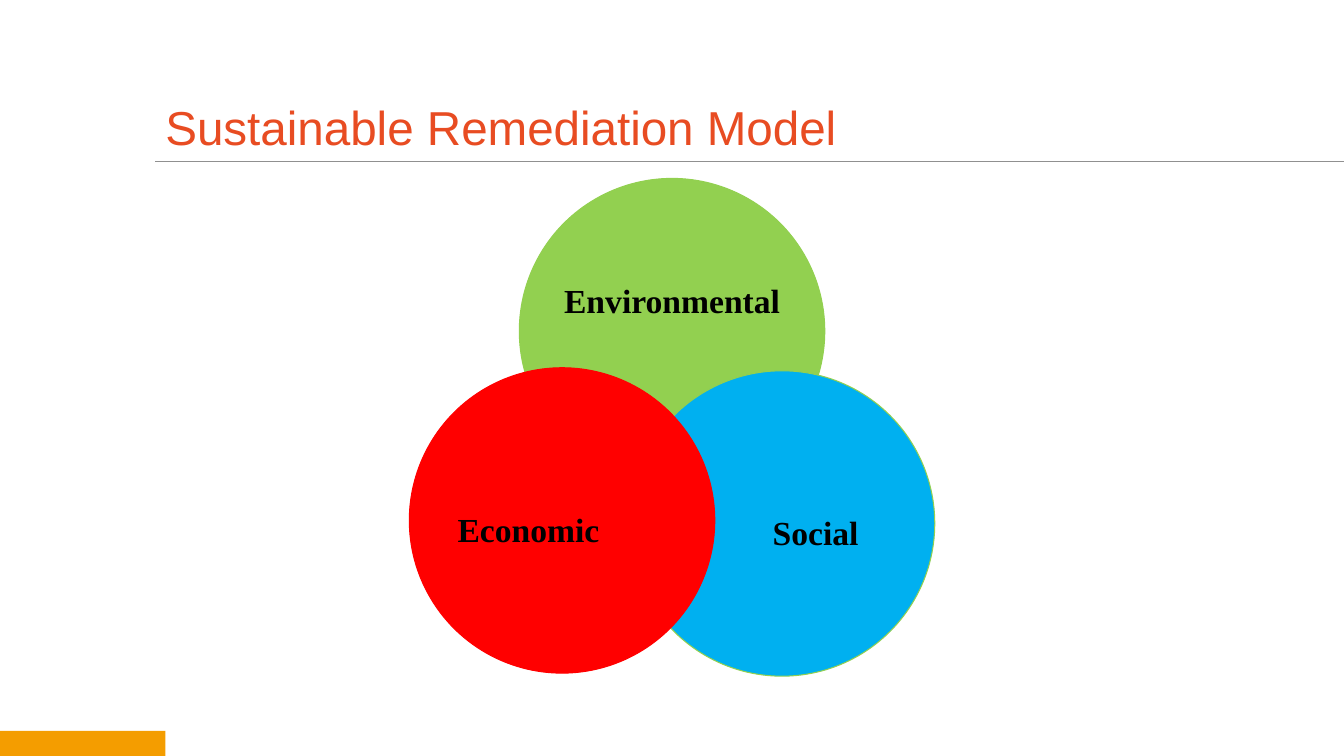
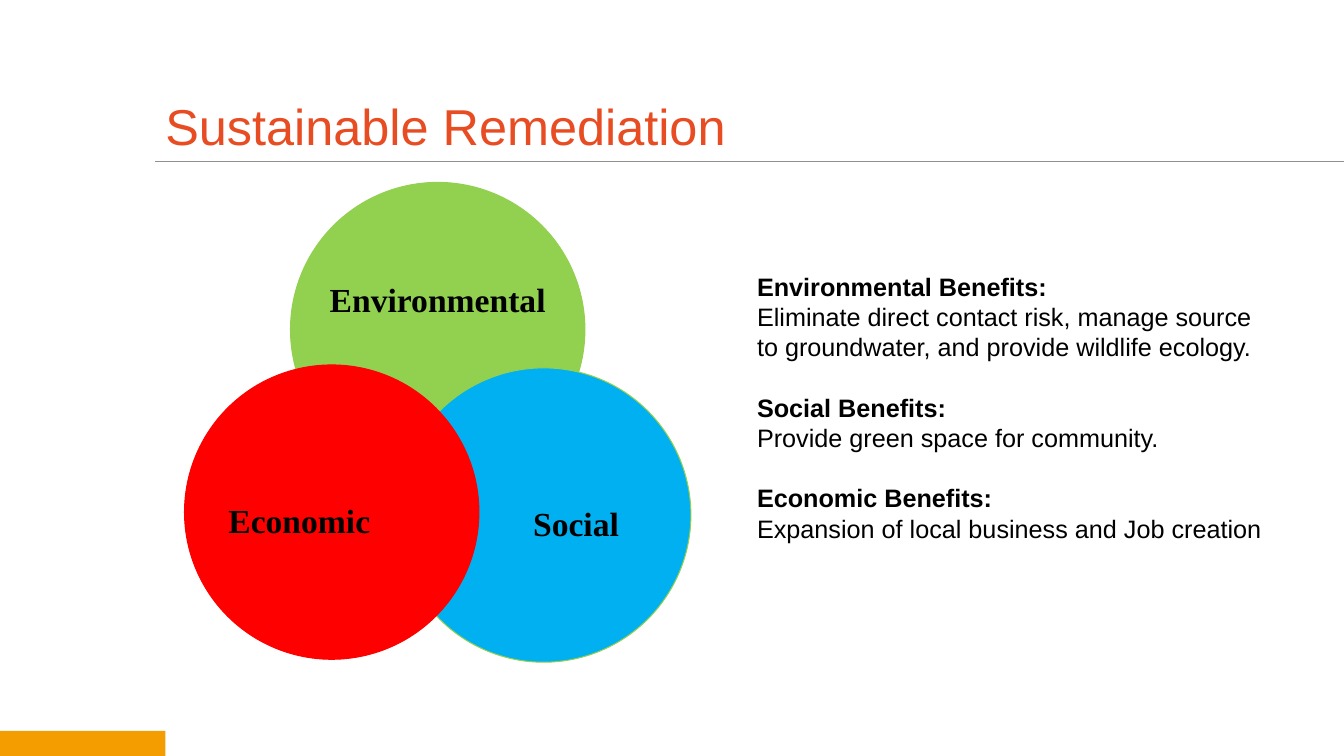
from pptx import Presentation
from pptx.dml.color import RGBColor
from pptx.enum.shapes import MSO_CONNECTOR, MSO_SHAPE
from pptx.enum.text import MSO_ANCHOR, MSO_AUTO_SIZE, PP_ALIGN
from pptx.oxml.ns import qn
from pptx.util import Inches, Pt
from lxml.etree import SubElement

ORANGE = RGBColor(0xF4, 0x9D, 0x00)
TITLE_RED = RGBColor(0xE8, 0x4C, 0x22)
RULE_GRAY = RGBColor(0x90, 0x90, 0x90)
GREEN = RGBColor(0x92, 0xD0, 0x50)
BLUE = RGBColor(0x00, 0xB0, 0xF0)
RED = RGBColor(0xFF, 0x00, 0x00)
BLACK = RGBColor(0x00, 0x00, 0x00)

SLIDE_WIDTH, SLIDE_HEIGHT = 13.33, 7.5
TITLE_LEFT = 1.54
BODY_LINE = Pt(21.6)

# Circle and label frames are fractions of the circle diameter.
CIRCLES = [
    ("Environmental", GREEN, GREEN, (0.36, 0), (0.13, 0.18, 0.74, 0.45)),
    ("Social", BLUE, GREEN, (0.72, 0.63), (0.31, 0.26, 0.6, 0.55)),
    ("Economic", RED, RED, (0, 0.62), (0.09, 0.26, 0.6, 0.55)),
]
BENEFITS = [
    ("Environmental Benefits:",
     "Eliminate direct contact risk, manage source to groundwater, "
     "and provide wildlife ecology."),
    ("Social Benefits:", "Provide green space for community."),
    ("Economic Benefits:", "Expansion of local business and Job creation"),
]


def add_span(para, text, font_name, size, color, bold=False):
    """Add one formatted run to a paragraph."""
    span = para.add_run()
    span.text = text
    span.font.name = font_name
    span.font.size = Pt(size)
    span.font.color.rgb = color
    span.font.bold = bold


def add_titled_page(deck, title, size):
    """Add a page with the shared title style, rule and corner band."""
    page = deck.slides.add_slide(deck.slide_layouts[5])
    band = page.shapes.add_shape(
        MSO_SHAPE.RECTANGLE, 0, Inches(SLIDE_HEIGHT - 0.25), Inches(1.64), Inches(0.25))
    band.shadow.inherit = False
    band.fill.solid()
    band.fill.fore_color.rgb = ORANGE
    band.line.fill.background()

    rule = page.shapes.add_connector(
        MSO_CONNECTOR.STRAIGHT, Inches(TITLE_LEFT), Inches(1.6),
        Inches(SLIDE_WIDTH), Inches(1.6))
    rule.line.color.rgb = RULE_GRAY
    rule.line.width = Pt(0.5)
    SubElement(rule._element.spPr, qn("a:effectLst"))

    box = page.shapes.title
    box.left, box.top = Inches(TITLE_LEFT), Inches(0.3)
    box.width, box.height = Inches(10.25), Inches(1.29)
    frame = box.text_frame
    frame.auto_size = MSO_AUTO_SIZE.NONE
    frame.vertical_anchor = MSO_ANCHOR.BOTTOM
    para = frame.paragraphs[0]
    para.alignment = PP_ALIGN.LEFT
    add_span(para, title, "Arial", size, TITLE_RED)
    return page


def add_circle(group, left, top, diameter, fill, outline):
    """Add a filled circle to the diagram."""
    circle = group.shapes.add_shape(
        MSO_SHAPE.OVAL, Inches(left), Inches(top), Inches(diameter), Inches(diameter))
    circle.shadow.inherit = False
    circle.fill.solid()
    circle.fill.fore_color.rgb = fill
    circle.line.color.rgb = outline
    circle.line.width = Pt(0.75)


def add_label(group, text, left, top, width, height):
    """Add a centred circle label without margins."""
    box = group.shapes.add_textbox(
        Inches(left), Inches(top), Inches(width), Inches(height))
    frame = box.text_frame
    frame.word_wrap = True
    frame.vertical_anchor = MSO_ANCHOR.MIDDLE
    frame.margin_left = frame.margin_right = 0
    frame.margin_top = frame.margin_bottom = 0
    para = frame.paragraphs[0]
    para.alignment = PP_ALIGN.CENTER
    para.line_spacing = 0.9
    add_span(para, text, "Times New Roman", 24, BLACK, bold=True)


def add_venn(page, left, top, diameter):
    """Add the three overlapping circles as one group."""
    group = page.shapes.add_group_shape()
    for text, fill, outline, offset, label in CIRCLES:
        circle_left = left + offset[0] * diameter
        circle_top = top + offset[1] * diameter
        add_circle(group, circle_left, circle_top, diameter, fill, outline)
        x, y, width, height = (part * diameter for part in label)
        add_label(group, text, circle_left + x, circle_top + y, width, height)


def add_benefits(page):
    """Add the benefit headings, each followed by its description."""
    box = page.shapes.add_textbox(
        Inches(7.41), Inches(2.64), Inches(5.25), Inches(2.83))
    frame = box.text_frame
    frame.word_wrap = True
    for index, (heading, description) in enumerate(BENEFITS):
        para = frame.add_paragraph() if index else frame.paragraphs[0]
        if index:
            para.space_before = BODY_LINE
        para.line_spacing = BODY_LINE
        add_span(para, heading, "Arial", 18, BLACK, bold=True)
        para = frame.add_paragraph()
        para.line_spacing = BODY_LINE
        add_span(para, description, "Arial", 18, BLACK)


def main():
    """Build and save the deck."""
    deck = Presentation()
    deck.slide_width = Inches(SLIDE_WIDTH)
    deck.slide_height = Inches(SLIDE_HEIGHT)

    page = add_titled_page(deck, "Sustainable Remediation Model", 34)
    add_venn(page, 4.06, 1.77, 3.03)

    page = add_titled_page(deck, "Sustainable Remediation", 36)
    add_venn(page, 1.83, 1.81, 2.92)
    add_benefits(page)

    deck.save("out.pptx")


if __name__ == "__main__":
    main()
